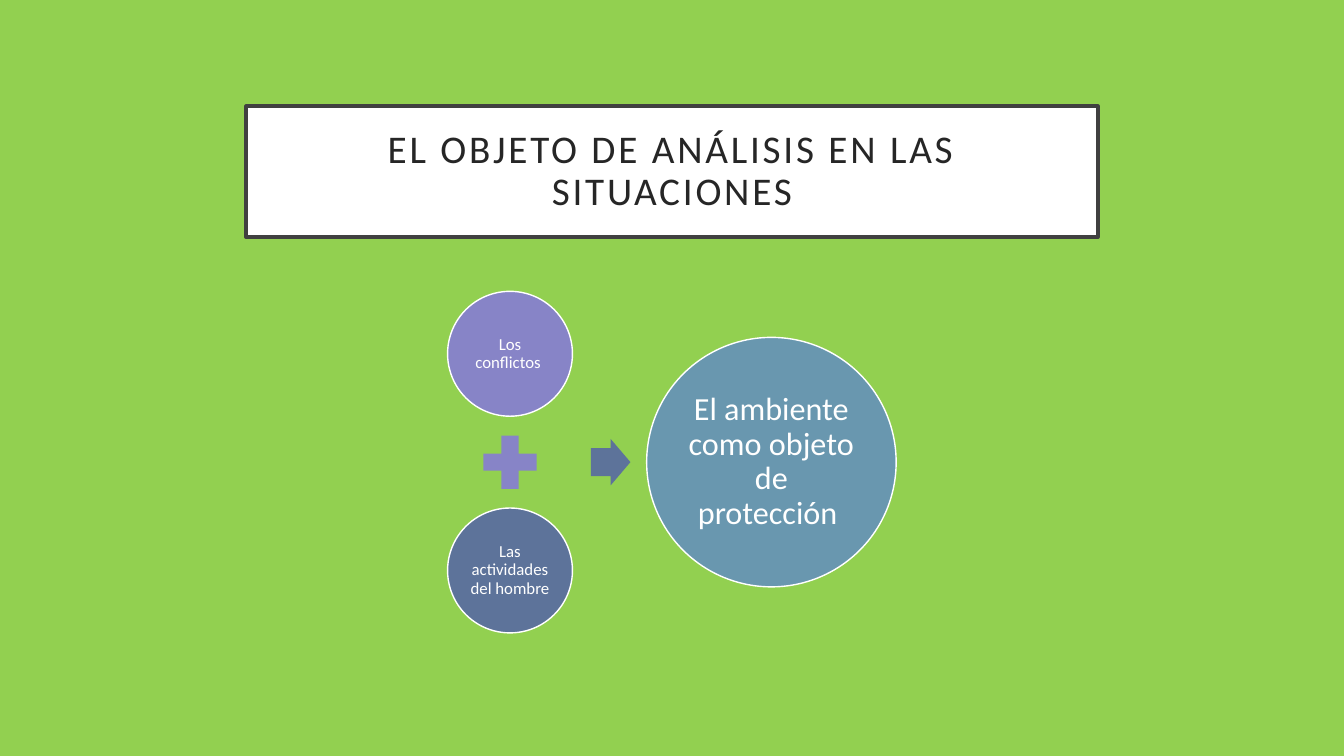
from pptx import Presentation
from pptx.dml.color import RGBColor as Rgb
from pptx.enum.shapes import MSO_SHAPE as Kind
from pptx.enum.text import MSO_ANCHOR as Anchor, PP_ALIGN as Align
from pptx.util import Pt

HUES = {
    "green": "92D050",
    "white": "FFFFFF",
    "frame": "404040",
    "ink": "262626",
    "lilac": "8784C7",
    "slate": "5D739A",
    "teal": "6997AF",
}


class Deck:
    """Holds the style and the current slide, and draws elements by their centre."""

    def __init__(self, font):
        self.font = font
        self.show = Presentation()
        self.show.slide_width, self.show.slide_height = Pt(960), Pt(540)
        self.slide = self.show.slides.add_slide(self.show.slide_layouts[6])
        self.paint(self.slide.background.fill, "green")

    def paint(self, fill, hue):
        fill.solid()
        fill.fore_color.rgb = Rgb.from_string(HUES[hue])

    def shape(self, kind, x, y, wide, high, hue, edge=None, weight=1):
        item = self.slide.shapes.add_shape(
            kind, Pt(x - wide / 2), Pt(y - high / 2), Pt(wide), Pt(high))
        item.shadow.inherit = False
        self.paint(item.fill, hue)
        if edge:
            self.paint(item.line.fill, edge)
            item.line.width = Pt(weight)
        else:
            item.line.fill.background()
        return item

    def label(self, item, text, size, hue, inset, track=0):
        frame = item.text_frame
        frame.word_wrap = True
        frame.vertical_anchor = Anchor.MIDDLE
        frame.margin_left = frame.margin_right = Pt(inset)
        frame.margin_top = frame.margin_bottom = Pt(inset)
        frame.text = text
        para = frame.paragraphs[0]
        para.alignment = Align.CENTER
        para.line_spacing = 0.9
        run = para.runs[0]
        run.font.name, run.font.size = self.font, Pt(size)
        run.font.color.rgb = Rgb.from_string(HUES[hue])
        if track:
            run._r.get_or_add_rPr().set("spc", str(track * 100))

    def title(self, text, x, y, wide, high):
        box = self.shape(Kind.RECTANGLE, x, y, wide, high, "white", "frame", 2.5)
        self.label(box, text, 28, "ink", 14.4, track=2)

    def disc(self, text, x, y, size, hue, points, inset):
        disc = self.shape(Kind.OVAL, x, y, size, size, hue, "white")
        self.label(disc, text, points, "white", inset)

    def plus(self, x, y, size, hue):
        self.shape(Kind.MATH_PLUS, x, y, size, size, hue)

    def arrow(self, x, y, wide, high, hue):
        arrow = self.shape(Kind.RIGHT_ARROW, x, y, wide, high, hue)
        arrow.adjustments[0], arrow.adjustments[1] = 0.6, 0.5

    def save(self):
        self.show.save("out.pptx")


def main():
    deck = Deck("Calibri")
    deck.title("EL OBJETO DE ANÁLISIS EN LAS SITUACIONES", 480, 122.6, 608.4, 93.6)
    left, mid, gap = 364.3, 330.1, 77.4
    deck.disc("Los conflictos ", left, mid - gap, 89.2, "lilac", 12, 1.2)
    deck.plus(left, mid, 51.8, "lilac")
    deck.disc("Las actividades del hombre", left, mid + gap, 89.2, "slate", 12, 1.2)
    deck.arrow(436.2, mid, 28.3, 33.2, "slate")
    deck.disc("El ambiente como objeto de protección ", 551, mid, 178.2, "teal", 23, 2.3)
    deck.save()


if __name__ == "__main__":
    main()
